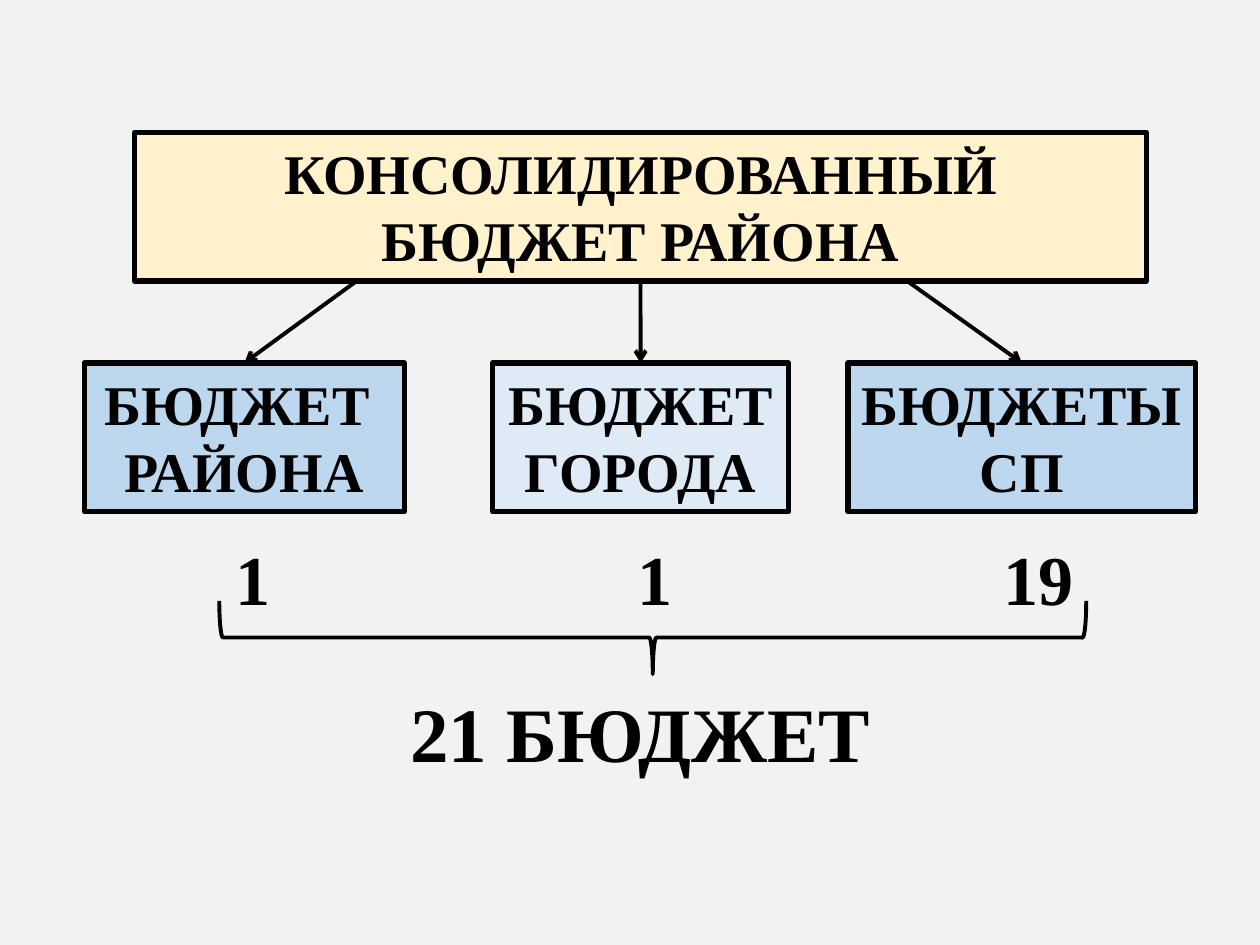
from lxml import etree
from pptx import Presentation
from pptx import util as u
from pptx.dml.color import RGBColor
from pptx.enum import shapes, text
from pptx.oxml.ns import qn

BLACK = RGBColor(0, 0, 0)
PAGE_GREY = RGBColor(0xF2, 0xF2, 0xF2)
CREAM = RGBColor(0xFF, 0xF2, 0xCC)
BLUE = RGBColor(0xBD, 0xD7, 0xEE)
PALE_BLUE = RGBColor(0xDE, 0xEB, 0xF7)
FONT = "Times New Roman"

BOX_HEIGHT = 85
TITLE_LEFT, TITLE_TOP, TITLE_WIDTH = 77, 75.6, 578.2
ROW_TOP = 207.4
ROW_LEFT, ROW_WIDTH = 48.2, 635

# lines, left, width, fill, start of the arrow from the title
BUDGETS = [
    ("БЮДЖЕТ \nРАЙОНА", 48.2, 182.9, BLUE, 203.8),
    ("БЮДЖЕТ\nГОРОДА", 281.5, 169.2, PALE_BLUE, 366),
    ("БЮДЖЕТЫ\nСП", 484.6, 198.7, BLUE, 518.4),
]
COUNTS = ["1", "1", "19"]
COUNT_CENTRES = [89, 319, 538]


def write(shape, wording, size, align=text.PP_ALIGN.CENTER):
    frame = shape.text_frame
    frame.word_wrap = True
    frame.vertical_anchor = text.MSO_ANCHOR.TOP
    frame.text = wording
    for para in frame.paragraphs:
        para.alignment = align
        for span in para.runs:
            span.font.name = FONT
            span.font.size = u.Pt(size)
            span.font.bold = True
            span.font.color.rgb = BLACK


def add_box(page, wording, left, top, width, fill):
    box = page.shapes.add_shape(
        shapes.MSO_SHAPE.RECTANGLE,
        u.Pt(left), u.Pt(top), u.Pt(width), u.Pt(BOX_HEIGHT))
    box.shadow.inherit = False
    box.fill.solid()
    box.fill.fore_color.rgb = fill
    box.line.color.rgb = BLACK
    box.line.width = u.Pt(3)
    write(box, wording, 32)


def add_label(page, wording, left, top, width, height, size, align):
    label = page.shapes.add_textbox(
        u.Pt(left), u.Pt(top), u.Pt(width), u.Pt(height))
    write(label, wording, size, align)
    return label


def add_counts(page):
    """One line of numbers, each centred on its own tab stop."""
    wording = "".join("\t" + count for count in COUNTS)
    label = add_label(page, wording, ROW_LEFT, 302.4, ROW_WIDTH, 55.4, 40,
                      text.PP_ALIGN.LEFT)
    properties = label.text_frame.paragraphs[0]._p.get_or_add_pPr()
    stops = etree.SubElement(properties, qn("a:tabLst"))
    for centre in COUNT_CENTRES:
        etree.SubElement(stops, qn("a:tab"), pos=str(int(u.Pt(centre))),
                         algn="ctr")


def add_brace(page):
    brace = page.shapes.add_shape(
        shapes.MSO_SHAPE.RIGHT_BRACE,
        u.Pt(352.1), u.Pt(116.6), u.Pt(41.8), u.Pt(495.4))
    brace.rotation = 90
    brace.adjustments[0] = 0.05
    brace.shadow.inherit = False
    brace.fill.background()
    brace.line.color.rgb = BLACK
    brace.line.width = u.Pt(2.25)


def add_arrow(page, start_x, start_y, end_x, end_y):
    arrow = page.shapes.add_connector(
        shapes.MSO_CONNECTOR.STRAIGHT,
        u.Pt(start_x), u.Pt(start_y), u.Pt(end_x), u.Pt(end_y))
    arrow.line.color.rgb = BLACK
    arrow.line.width = u.Pt(2.25)
    etree.SubElement(arrow.line._get_or_add_ln(), qn("a:tailEnd"), type="arrow")
    etree.SubElement(arrow._element.spPr, qn("a:effectLst"))


def main():
    deck = Presentation()
    deck.slide_width, deck.slide_height = u.Pt(720), u.Pt(540)
    page = deck.slides.add_slide(deck.slide_layouts[6])
    page.background.fill.solid()
    page.background.fill.fore_color.rgb = PAGE_GREY

    add_box(page, "КОНСОЛИДИРОВАННЫЙ БЮДЖЕТ РАЙОНА",
            TITLE_LEFT, TITLE_TOP, TITLE_WIDTH, CREAM)
    for wording, left, width, fill, arrow_start in BUDGETS:
        add_box(page, wording, left, ROW_TOP, width, fill)
        add_arrow(page, arrow_start, TITLE_TOP + BOX_HEIGHT,
                  left + width / 2, ROW_TOP)
    add_counts(page)
    add_brace(page)
    add_label(page, "21 БЮДЖЕТ", TITLE_LEFT, 388.1, TITLE_WIDTH, 60.5, 44,
              text.PP_ALIGN.CENTER)
    deck.save("out.pptx")


if __name__ == "__main__":
    main()
